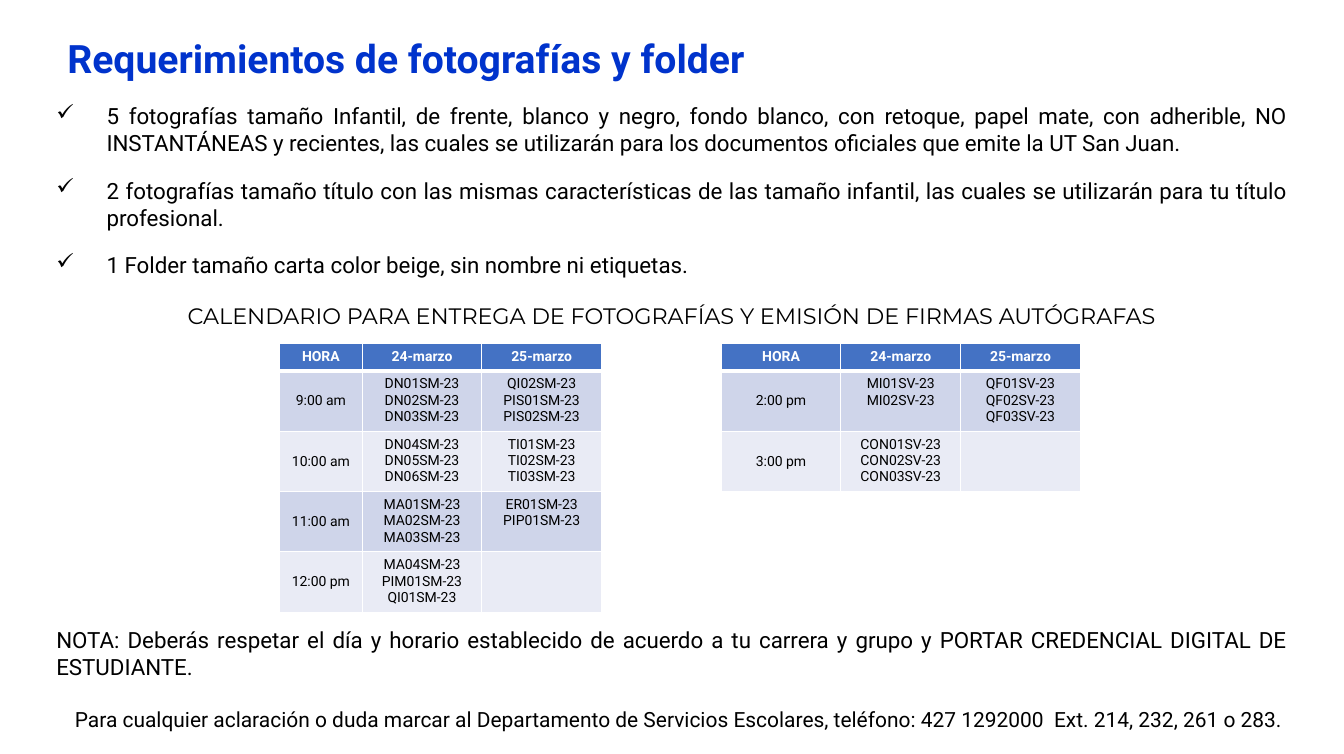
from dataclasses import dataclass

from lxml.etree import SubElement
from pptx import Presentation
from pptx.dml.color import RGBColor
from pptx.enum.text import MSO_ANCHOR, MSO_AUTO_SIZE, PP_ALIGN
from pptx.oxml.ns import qn
from pptx.util import Pt

EMU_PER_PX = 9144  # 100 px to the inch


def px(length: int) -> int:
    return length * EMU_PER_PX


@dataclass(frozen=True)
class Theme:
    font: str = "Roboto"
    heading_font: str = "Montserrat"
    title: str = "0033CC"
    text: str = "000000"
    white: str = "FFFFFF"
    header: str = "4472C4"
    bands: tuple[str, str] = ("CFD5EA", "E9EBF5")
    title_size: int = 28
    body_size: int = 16
    contact_size: int = 15
    table_size: int = 10


@dataclass(frozen=True)
class Box:
    left: int
    top: int
    width: int
    height: int
    side_inset: int = 10


@dataclass(frozen=True)
class Session:
    hour: str
    first_day: str  # groups separated by spaces
    second_day: str = ""


THEME = Theme()
TITLE_BOX = Box(57, 14, 1217, 93)
REQUIREMENTS_BOX = Box(40, 97, 1256, 238, 16)
NOTE_BOX = Box(40, 618, 1256, 65, 16)
CONTACT_BOX = Box(57, 698, 1236, 35)
BULLET_INDENT = 50

REQUIREMENTS = [
    "5 fotografías tamaño Infantil, de frente, blanco y negro, fondo blanco, con retoque, papel mate, "
    "con adherible, NO INSTANTÁNEAS y recientes, las cuales se utilizarán para los documentos "
    "oficiales que emite la UT San Juan.",
    "2 fotografías tamaño título con las mismas características de las tamaño infantil, las cuales "
    "se utilizarán para tu título profesional.",
    "1 Folder tamaño carta color beige, sin nombre ni etiquetas.",
]

TABLE_LEFT, TABLE_TOP = 278, 342
HOUR_WIDTH, COLUMN_WIDTH = 82, 119
HEADER_HEIGHT, ROW_HEIGHT = 27, 60
HEADINGS = ("HORA", "24-marzo", "25-marzo")
MORNING = [
    Session("9:00 am", "DN01SM-23 DN02SM-23 DN03SM-23", "QI02SM-23 PIS01SM-23 PIS02SM-23"),
    Session("10:00 am", "DN04SM-23 DN05SM-23 DN06SM-23", "TI01SM-23 TI02SM-23 TI03SM-23"),
    Session("11:00 am", "MA01SM-23 MA02SM-23 MA03SM-23", "ER01SM-23 PIP01SM-23"),
    Session("12:00 pm", "MA04SM-23 PIM01SM-23 QI01SM-23"),
]
AFTERNOON = [
    Session("2:00 pm", "MI01SV-23 MI02SV-23", "QF01SV-23 QF02SV-23 QF03SV-23"),
    Session("3:00 pm", "CON01SV-23 CON02SV-23 CON03SV-23"),
]
AFTERNOON_COLUMN = len(HEADINGS) + 1  # one empty column parts the two halves


def write(text_frame, text: str, *, size: int = THEME.body_size, font: str = THEME.font,
          color: str = THEME.text, bold: bool = False, align=PP_ALIGN.JUSTIFY,
          before: float = 0, line_spacing: float = 1.0, bullet: str = "") -> None:
    """Fill the empty first paragraph, or add one after the existing text."""
    paragraph = text_frame.paragraphs[0]
    if paragraph.runs:
        paragraph = text_frame.add_paragraph()
    if bullet:
        properties = paragraph._p.get_or_add_pPr()
        properties.set("marL", str(px(BULLET_INDENT)))
        properties.set("indent", str(-px(BULLET_INDENT)))
        SubElement(properties, qn("a:buChar")).set("char", bullet)
    paragraph.alignment = align
    paragraph.space_before = Pt(before)
    paragraph.line_spacing = line_spacing
    run = paragraph.add_run()
    run.text = text
    run.font.size = Pt(size)
    run.font.name = font
    run.font.bold = bold
    run.font.color.rgb = RGBColor.from_string(color)


def place(shape, box: Box, anchor=MSO_ANCHOR.TOP):
    """Move a text shape to its box and return its text frame."""
    shape.left, shape.top = px(box.left), px(box.top)
    shape.width, shape.height = px(box.width), px(box.height)
    text_frame = shape.text_frame
    text_frame.word_wrap = True
    text_frame.auto_size = MSO_AUTO_SIZE.NONE
    text_frame.vertical_anchor = anchor
    text_frame.margin_left = text_frame.margin_right = px(box.side_inset)
    text_frame.margin_top = text_frame.margin_bottom = px(5)
    return text_frame


def add_text(slide, box: Box):
    return place(slide.shapes.add_textbox(0, 0, 0, 0), box)


def set_borders(cell, bottom: int) -> None:
    properties = cell._tc.get_or_add_tcPr()
    for side, width in (("L", 1), ("R", 1), ("T", 1), ("B", bottom)):
        line = SubElement(properties, qn(f"a:ln{side}"), w=str(Pt(width)))
        fill = SubElement(line, qn("a:solidFill"))
        SubElement(fill, qn("a:srgbClr"), val=THEME.white)


def style_empty_cell(cell) -> None:
    cell.fill.background()
    paragraph = cell.text_frame.paragraphs[0]
    SubElement(paragraph._p, qn("a:endParaRPr"), sz=str(THEME.table_size * 100))


def fill_cell(cell, lines: list[str], fill: str, **text_format) -> None:
    cell.fill.solid()
    cell.fill.fore_color.rgb = RGBColor.from_string(fill)
    for line in lines:
        write(cell.text_frame, line, size=THEME.table_size, align=PP_ALIGN.CENTER, **text_format)


def fill_half(table, first_column: int, sessions: list[Session]) -> None:
    for offset, heading in enumerate(HEADINGS):
        fill_cell(table.cell(0, first_column + offset), [heading], THEME.header,
                  color=THEME.white, bold=True)
    for row, session in enumerate(sessions, start=1):
        band = THEME.bands[(row - 1) % 2]
        hour_cell = table.cell(row, first_column)
        hour_cell.vertical_anchor = MSO_ANCHOR.MIDDLE
        fill_cell(hour_cell, [session.hour], band)
        for offset, groups in enumerate((session.first_day, session.second_day), start=1):
            fill_cell(table.cell(row, first_column + offset), groups.split(), band)


def add_calendar(slide) -> None:
    widths = [HOUR_WIDTH] + [COLUMN_WIDTH] * (2 * len(HEADINGS))
    heights = [HEADER_HEIGHT] + [ROW_HEIGHT] * len(MORNING)
    table = slide.shapes.add_table(len(heights), len(widths), px(TABLE_LEFT), px(TABLE_TOP),
                                   px(sum(widths)), px(sum(heights))).table
    table.horz_banding = False
    for column, width in zip(table.columns, widths):
        column.width = px(width)
    for index, height in enumerate(heights):
        table.rows[index].height = px(height)
        for cell in table.rows[index].cells:
            set_borders(cell, bottom=3 if index == 0 else 1)
            style_empty_cell(cell)
    # Filled cells write their runs before the end-of-paragraph size
    fill_half(table, 0, MORNING)
    fill_half(table, AFTERNOON_COLUMN, AFTERNOON)


def main() -> None:
    presentation = Presentation()
    presentation.slide_width, presentation.slide_height = px(1336), px(750)
    slide = presentation.slides.add_slide(presentation.slide_layouts[5])

    # Requirements and calendar heading
    requirements = add_text(slide, REQUIREMENTS_BOX)
    for index, requirement in enumerate(REQUIREMENTS):
        write(requirements, requirement, bullet="✓", before=15 if index else 0)
    write(requirements, "CALENDARIO PARA ENTREGA DE FOTOGRAFÍAS Y EMISIÓN DE FIRMAS AUTÓGRAFAS",
          font=THEME.heading_font, align=PP_ALIGN.CENTER, before=17)

    # Title
    title = place(slide.shapes.title, TITLE_BOX, MSO_ANCHOR.MIDDLE)
    write(title, "Requerimientos de fotografías y folder", size=THEME.title_size,
          color=THEME.title, bold=True, align=PP_ALIGN.LEFT, line_spacing=0.9)

    # Calendar, note and contact line
    add_calendar(slide)
    write(add_text(slide, NOTE_BOX),
          "NOTA: Deberás respetar el día y horario establecido de acuerdo a tu carrera y grupo y "
          "PORTAR CREDENCIAL DIGITAL DE ESTUDIANTE.")
    write(add_text(slide, CONTACT_BOX),
          "Para cualquier aclaración o duda marcar al Departamento de Servicios Escolares, "
          "teléfono: 427 1292000  Ext. 214, 232, 261 o 283.",
          size=THEME.contact_size, align=PP_ALIGN.CENTER)

    presentation.save("out.pptx")


if __name__ == "__main__":
    main()
